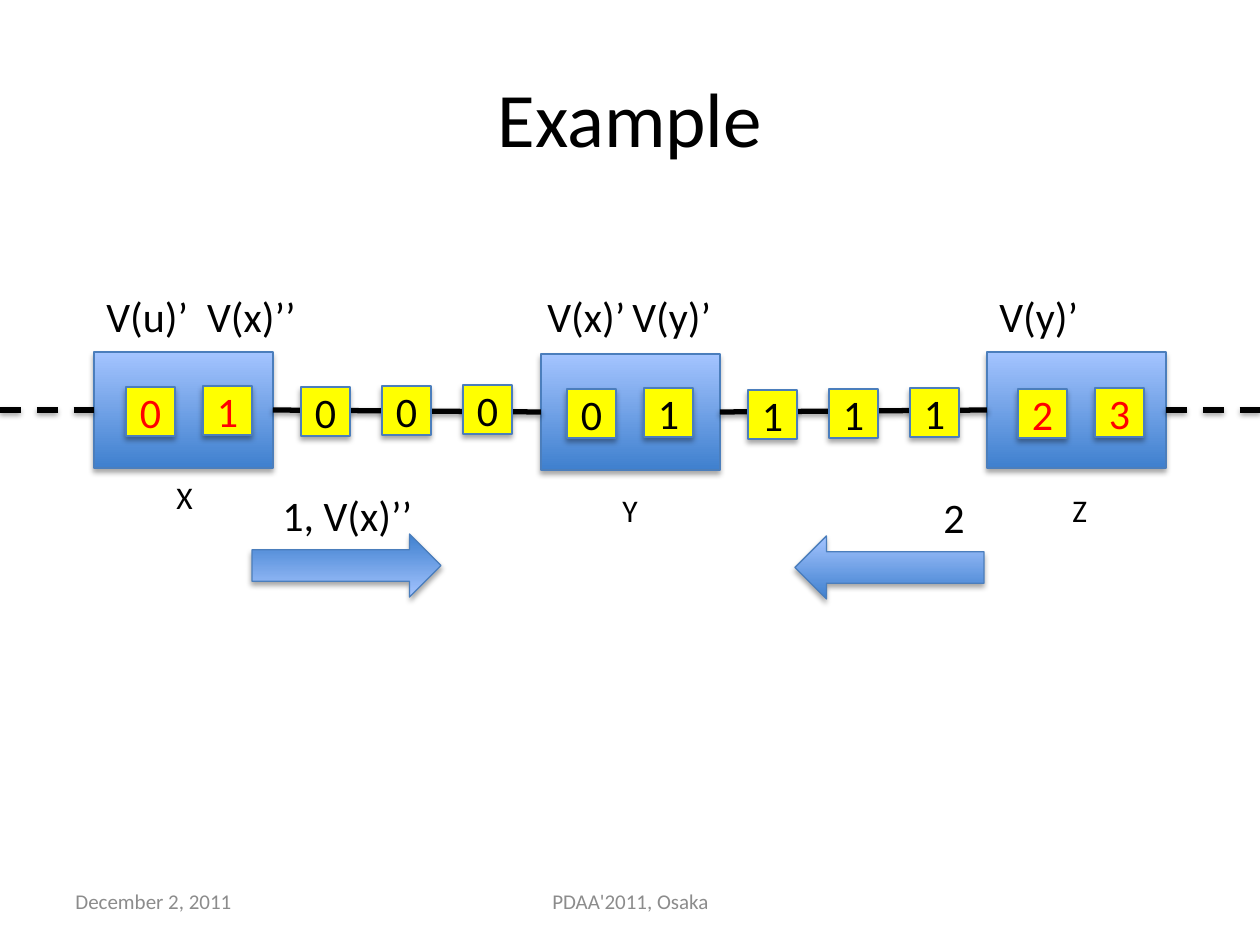
from lxml import etree
from pptx import Presentation
from pptx.dml.color import RGBColor
from pptx.enum.dml import MSO_LINE
from pptx.enum.shapes import MSO_CONNECTOR, MSO_SHAPE
from pptx.enum.text import MSO_ANCHOR, MSO_AUTO_SIZE, PP_ALIGN
from pptx.oxml.ns import qn
from pptx.util import Emu, Pt

RECT, LEFT_ARROW = MSO_SHAPE.RECTANGLE, MSO_SHAPE.LEFT_ARROW
STRAIGHT, DASH = MSO_CONNECTOR.STRAIGHT, MSO_LINE.DASH
LEFT, CENTER = PP_ALIGN.LEFT, PP_ALIGN.CENTER
TOP, MIDDLE = MSO_ANCHOR.TOP, MSO_ANCHOR.MIDDLE
GROW = MSO_AUTO_SIZE.SHAPE_TO_FIT_TEXT

FONT = "Calibri"
BLACK, RED, GREY = "000000", "FF0000", "8C8C8C"
YELLOW, EDGE, DARK, LIGHT = "FFFF00", "4B7EBC", "3F80CE", "A4C4FF"
SIDE_LEFT, SIDE_RIGHT = 1, 3
NODE_W, NODE_H, TOKEN = 179, 116, 49
PAIR_STEP, CHANNEL_STEP = 77, 81


def px(n):
    return Emu(round(n * 914400 / 126))


def rgb(color):
    return RGBColor.from_string(color)


def write(sp, text, size, color=BLACK, align=LEFT, anchor=TOP):
    tf = sp.text_frame
    tf.text = text
    tf.vertical_anchor = anchor
    p = tf.paragraphs[0]
    p.alignment = align
    font = p.runs[0].font
    font.name, font.size = FONT, Pt(size)
    font.color.rgb = rgb(color)


def add_shadow(sp, alpha, dist):
    effects = etree.SubElement(sp._element.spPr, qn("a:effectLst"))
    shadow = etree.SubElement(effects, qn("a:outerShdw"), blurRad=str(Pt(3.1)),
                              dist=str(Pt(dist)), dir="5400000", rotWithShape="0")
    clr = etree.SubElement(shadow, qn("a:srgbClr"), val=BLACK)
    etree.SubElement(clr, qn("a:alpha"), val=str(alpha * 1000))


def add_block(slide, kind, x, y, w, h):
    """An outlined shape with a soft shadow; the fill is left to the caller."""
    sp = slide.shapes.add_shape(kind, px(x), px(y), px(w), px(h))
    sp.line.color.rgb = rgb(EDGE)
    sp.line.width = Pt(0.75)
    add_shadow(sp, 35, 1.8)
    return sp


def add_blue(slide, kind, x, y, w, h):
    sp = add_block(slide, kind, x, y, w, h)
    sp.fill.gradient()
    sp.fill.gradient_angle = 90
    for stop, color in zip(sp.fill.gradient_stops, (DARK, LIGHT)):
        stop.color.rgb = rgb(color)
    return sp


def add_token(slide, text, x, y, color=BLACK):
    sp = add_block(slide, RECT, x, y, TOKEN, TOKEN)
    sp.fill.solid()
    sp.fill.fore_color.rgb = rgb(YELLOW)
    write(sp, text, 24, color, CENTER, MIDDLE)


def add_link(slide, start, end, source=None, target=None, dash=None):
    ln = slide.shapes.add_connector(STRAIGHT, px(start[0]), px(start[1]),
                                    px(end[0]), px(end[1]))
    if source is not None:
        ln.begin_connect(source, SIDE_RIGHT)
    if target is not None:
        ln.end_connect(target, SIDE_LEFT)
    ln.line.color.rgb = rgb(BLACK)
    ln.line.width = Pt(3)
    if dash is not None:
        ln.line.dash_style = dash
    add_shadow(ln, 38, 1.6)


def add_label(slide, text, x, y, w, h=63, size=24, wrap=False):
    sp = slide.shapes.add_textbox(px(x), px(y), px(w), px(h))
    sp.text_frame.word_wrap = wrap
    sp.text_frame.auto_size = GROW
    write(sp, text, size)


def add_footer(slide, text, x, w, align):
    sp = slide.shapes.add_textbox(px(x), px(876), px(w), px(50))
    sp.text_frame.word_wrap = True
    write(sp, text, 12, GREY, align, MIDDLE)


def main():
    prs = Presentation()
    prs.slide_width, prs.slide_height = px(1260), px(945)
    slide = prs.slides.add_slide(prs.slide_layouts[5])

    # Title and footer
    title = slide.shapes.title
    title.left, title.top, title.width, title.height = px(63), px(38), px(1134), px(157)
    write(title, "Example", 44, BLACK, CENTER, MIDDLE)
    add_footer(slide, "December 2, 2011", 63, 294, LEFT)
    add_footer(slide, "PDAA'2011, Osaka", 431, 399, CENTER)

    # Nodes and the chain that links them
    node_spots = [(94, 352), (541, 354), (987, 352)]
    nodes = [add_blue(slide, RECT, x, y, NODE_W, NODE_H) for x, y in node_spots]
    mids = [y + NODE_H / 2 for _, y in node_spots]
    lefts = [(x, mid) for (x, _), mid in zip(node_spots, mids)]
    rights = [(x + NODE_W, mid) for x, mid in lefts]
    add_link(slide, (0, mids[0]), lefts[0], target=nodes[0], dash=DASH)
    add_link(slide, rights[-1], (1260, mids[-1]), source=nodes[-1], dash=DASH)
    for i in range(len(nodes) - 1):
        add_link(slide, rights[i], lefts[i + 1], nodes[i], nodes[i + 1])

    # Tokens held by the nodes
    for values, x, y, color in [("01", 126, 387, RED), ("01", 567, 389, BLACK),
                                ("23", 1018, 389, RED)]:
        for i, value in enumerate(values):
            add_token(slide, value, x + i * PAIR_STEP, y - i, color)

    # Tokens in the channels
    for value, x, tops in [("0", 301, (387, 386, 385)), ("1", 748, (390, 389, 388))]:
        for i, y in enumerate(tops):
            add_token(slide, value, x + i * CHANNEL_STEP, y)

    # Node names and variables
    for name, x, y in [("X", 164, 472), ("Y", 610, 485), ("Z", 1060, 485)]:
        add_label(slide, name, x, y, 41, 50, 18)
    for text, x in [("V(x)’", 535), ("V(y)’", 620), ("V(y)’", 987)]:
        add_label(slide, text, x, 284, 105)
    add_label(slide, "V(u)’  V(x)’’", 94, 284, 231, wrap=True)

    # Messages
    for text, label_x, label_y, x, y, turn in [("1, V(x)’’", 270, 483, 252, 534, 180),
                                               ("2", 931, 485, 795, 536, 0)]:
        add_blue(slide, LEFT_ARROW, x, y, 189, 63).rotation = turn
        add_label(slide, text, label_x, label_y, 160, wrap=True)

    prs.save("out.pptx")


if __name__ == "__main__":
    main()
